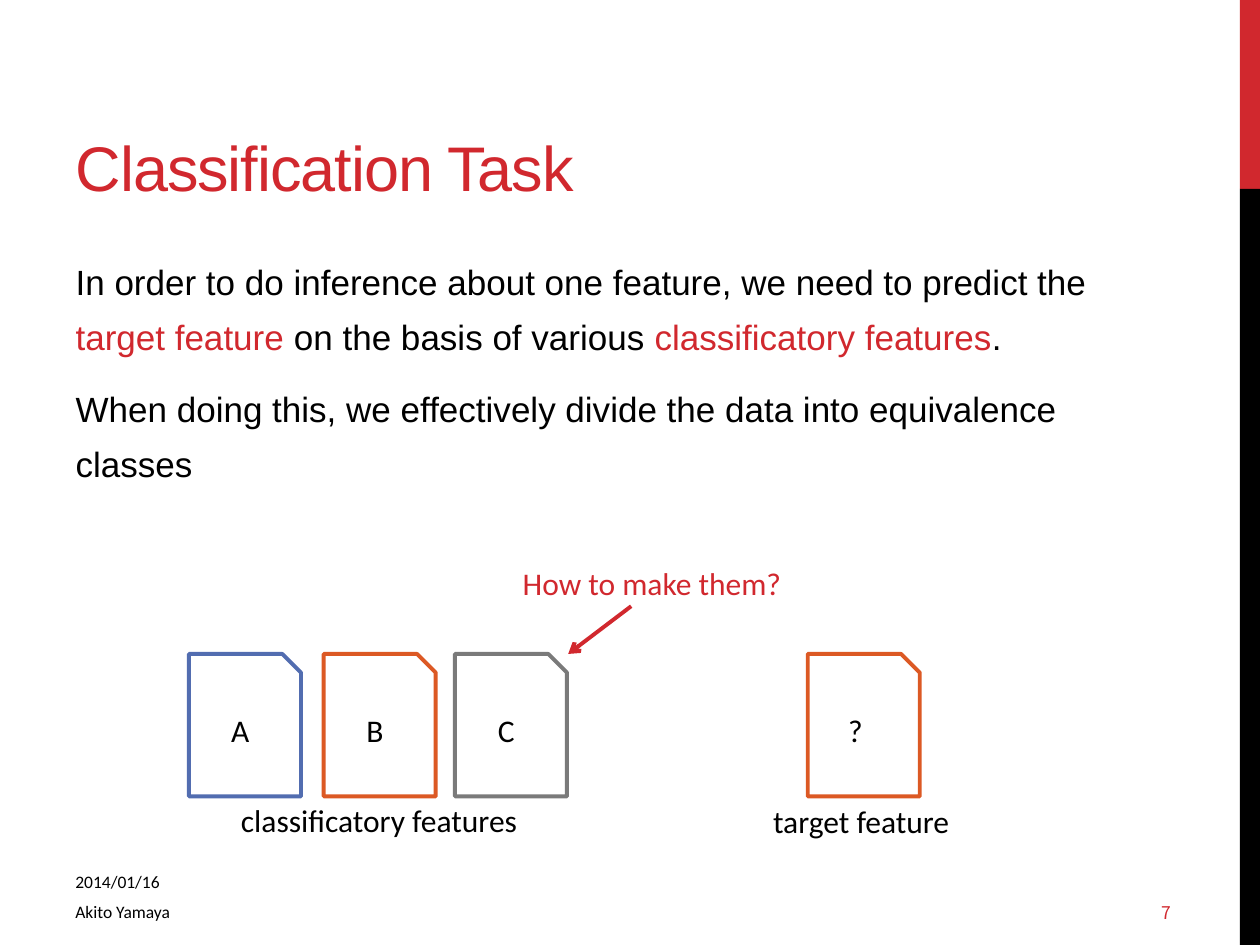
"""Build the Classification Task slide."""
import pptx
import pptx.util
import pptx.dml.color
import pptx.enum.shapes
import pptx.enum.text
import pptx.oxml.ns
import lxml.etree

Pt = pptx.util.Pt
ALIGN = pptx.enum.text.PP_ALIGN
ANCHOR = pptx.enum.text.MSO_ANCHOR
SHAPES = pptx.enum.shapes.MSO_SHAPE
COLORS = {
    "red": "D1282E", "black": "000000", "white": "FFFFFF",
    "blue": "526DB0", "orange": "DC5924", "gray": "7A7A7A",
}
BODY = [
    [("In order to do inference about one feature, we need to predict the ", "black"),
     ("target feature ", "red"), ("on the basis of various ", "black"),
     ("classificatory features", "red"), (".", "black")],
    [("When doing this, we effectively divide the data into equivalence classes", "black")],
]
BODY_FORMAT = {"line_spacing": 1.3, "space_before": Pt(4), "space_after": Pt(6),
               "alignment": ALIGN.LEFT}
CARD_SIZE = (64, 81.4)


def color(name):
    """Return the named color."""
    return pptx.dml.color.RGBColor.from_string(COLORS[name])


def apply_format(target, values):
    """Set each attribute in values on the target."""
    for name, value in values.items():
        setattr(target, name, value)


def add_element(parent, tag, **attributes):
    """Append a drawing element to the parent."""
    return lxml.etree.SubElement(parent, pptx.oxml.ns.qn(tag), attributes)


def place(shape, box):
    """Move a shape to a box given in points."""
    apply_format(shape, dict(zip(("left", "top", "width", "height"), map(Pt, box))))


def add_run(paragraph, text, size, color_name="black", font="Calibri"):
    """Add a formatted run to a paragraph."""
    run = paragraph.add_run()
    run.text = text
    apply_format(run.font, {"size": Pt(size), "name": font, "bold": False})
    run.font.color.rgb = color(color_name)
    return run


def add_label(slide, box, text, size=18, color_name="black", font="Calibri",
              alignment=ALIGN.CENTER, **frame_format):
    """Add a one-line text box."""
    frame = slide.shapes.add_textbox(*map(Pt, box)).text_frame
    apply_format(frame, {"word_wrap": True, **frame_format})
    frame.paragraphs[0].alignment = alignment
    add_run(frame.paragraphs[0], text, size, color_name, font)


def add_side_bar(slide, box):
    """Stack a red fifth and a black remainder in the box."""
    left, top, width, height = box
    split = height / 5
    for name, offset, length in (("red", 0, split), ("black", split, height - split)):
        bar = slide.shapes.add_shape(
            SHAPES.RECTANGLE, *map(Pt, (left, top + offset, width, length)))
        bar.shadow.inherit = False
        bar.fill.solid()
        bar.fill.fore_color.rgb = color(name)
        bar.line.fill.background()


def fill_title(slide, box):
    """Place and write the title."""
    title = slide.shapes.title
    place(title, box)
    apply_format(title.text_frame, {"vertical_anchor": ANCHOR.BOTTOM, "word_wrap": True,
                                    "auto_size": pptx.enum.text.MSO_AUTO_SIZE.NONE})
    paragraph = title.text_frame.paragraphs[0]
    paragraph.alignment = ALIGN.LEFT
    run = add_run(paragraph, "Classification Task", 36, "red", "Arial")
    run.font._element.set("spc", "-60")


def fill_body(slide, box):
    """Place the body and write its paragraphs without bullets."""
    body = slide.placeholders[1]
    place(body, box)
    frame = body.text_frame
    apply_format(frame, {"vertical_anchor": ANCHOR.TOP, "word_wrap": True,
                         "auto_size": pptx.enum.text.MSO_AUTO_SIZE.NONE})
    for index, runs in enumerate(BODY):
        paragraph = frame.add_paragraph() if index else frame.paragraphs[0]
        apply_format(paragraph, BODY_FORMAT)
        properties = paragraph._p.get_or_add_pPr()
        properties.set("marL", "0")
        properties.set("indent", "0")
        add_element(properties, "a:buNone")
        for text, color_name in runs:
            add_run(paragraph, text, 20, color_name, "Arial")


def add_card(slide, box, text, line_color):
    """Add a feature card with a snipped corner."""
    card = slide.shapes.add_shape(SHAPES.SNIP_1_RECTANGLE, *map(Pt, box))
    card.shadow.inherit = False
    card.fill.solid()
    card.fill.fore_color.rgb = color("white")
    card.line.color.rgb = color(line_color)
    card.line.width = Pt(2.25)
    card.text_frame.vertical_anchor = ANCHOR.MIDDLE
    paragraph = card.text_frame.paragraphs[0]
    paragraph.alignment = ALIGN.CENTER
    add_run(paragraph, text, 18)


def add_arrow(slide, start, end):
    """Add a red arrow between two points."""
    arrow = slide.shapes.add_connector(
        pptx.enum.shapes.MSO_CONNECTOR.STRAIGHT, *map(Pt, (*start, *end)))
    arrow.line.color.rgb = color("red")
    arrow.line.width = Pt(2.25)
    add_element(arrow.line._get_or_add_ln(), "a:tailEnd", type="arrow")
    add_element(arrow._element.spPr, "a:effectLst")


def add_diagram(slide, box):
    """Draw the feature cards, their captions and the question in the box."""
    left, top, width, height = box
    card_top = top + 54.7
    cards = (("A", 0, "blue"), ("B", 77, "orange"), ("C", 152, "gray"),
             ("? ", width - 36.7 - CARD_SIZE[0], "orange"))
    for text, offset, line_color in cards:
        add_card(slide, (left + offset, card_top, *CARD_SIZE), text, line_color)
    caption_top = top + height - 29
    add_label(slide, (left + width - 140.4, caption_top, 140.4, 29), "target feature")
    add_label(slide, (left + 10, caption_top - 0.9, 197.3, 29), "classificatory features")
    add_arrow(slide, (left + 252.7, top + 27.4), (left + 216.7, card_top))
    add_label(slide, (left + 175.7, top, 177.8, 29), "How to make them?", color_name="red")


def add_footer(slide, box):
    """Write the date, author and slide number."""
    left, top, width, height = box
    add_label(slide, (left, top, 270, 23.8), "2014/01/16", 10, alignment=ALIGN.LEFT,
              vertical_anchor=ANCHOR.BOTTOM, margin_bottom=0)
    add_label(slide, (left, top + 25.2, 270, 22.3), "Akito Yamaya", 10, alignment=ALIGN.LEFT)
    add_label(slide, (left + width - 103.7, top + height - 28.8, 103.7, 28.8), "7", 10, "red",
              "Noto Sans CJK JP", ALIGN.LEFT, vertical_anchor=ANCHOR.MIDDLE)


def main():
    """Build and save the presentation."""
    presentation = pptx.Presentation()
    presentation.slide_width, presentation.slide_height = Pt(720), Pt(540)
    slide = presentation.slides.add_slide(presentation.slide_layouts[1])
    add_side_bar(slide, (708.5, 0, 11.5, 540))
    fill_title(slide, (36, 12, 635, 108))
    fill_body(slide, (36, 138.2, 635, 344.2))
    add_footer(slide, (36, 486, 724.3, 49.7))
    add_diagram(slide, (108, 319, 454.3, 165))
    presentation.save("out.pptx")


if __name__ == "__main__":
    main()
